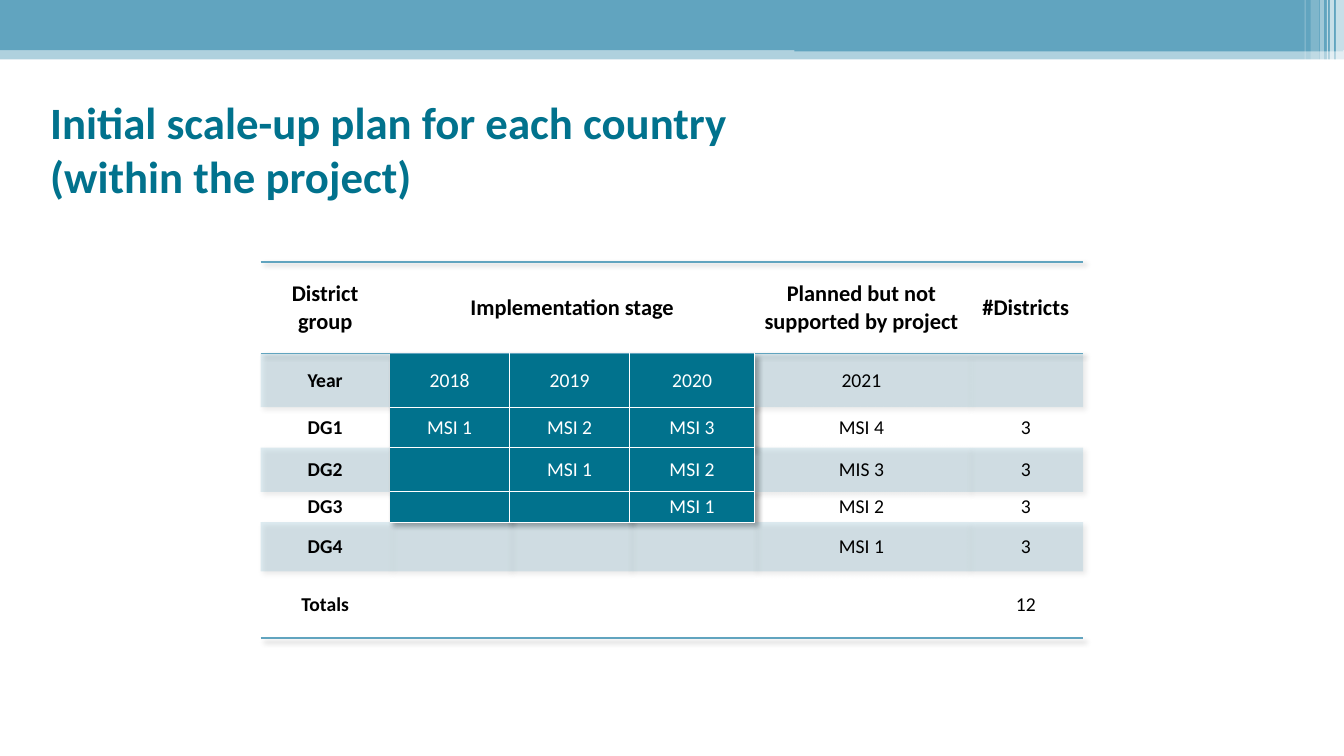
from lxml import etree
from pptx import Presentation
from pptx.dml.color import RGBColor
from pptx.enum.shapes import MSO_SHAPE
from pptx.enum.text import MSO_ANCHOR, PP_ALIGN
from pptx.oxml import parse_xml
from pptx.oxml.ns import qn
from pptx.util import Inches, Pt

RECTANGLE = MSO_SHAPE.RECTANGLE
MIDDLE = MSO_ANCHOR.MIDDLE
LEFT, CENTER = PP_ALIGN.LEFT, PP_ALIGN.CENTER
SKY = RGBColor(0x61, 0xA4, 0xBF)
TEAL = RGBColor(0x01, 0x72, 0x8D)
WHITE = RGBColor(0xFF, 0xFF, 0xFF)
BLACK = RGBColor(0, 0, 0)
FONT = "Calibri"
WIDTH, HEIGHT = 13.33, 7.5
NO_STYLE = "{2D5ABB26-0587-4C30-8999-92F81FD0307C}"
SHADOW = (
    '<a:effectLst xmlns:a="http://schemas.openxmlformats.org/drawingml/2006/main">'
    '<a:outerShdw blurRad="50800" dist="38100" dir="2700000" algn="tl" rotWithShape="0">'
    '<a:srgbClr val="000000"><a:alpha val="40000"/></a:srgbClr>'
    '</a:outerShdw></a:effectLst>')

# Content
TITLE = ["Initial scale-up plan for each country", "(within the project)"]
PLAN = [
    ["District group", "Implementation stage", "", "",
     "Planned but not supported by project", "#Districts"],
    ["Year", "2018", "2019", "2020", "2021", ""],
    ["DG1", "MSI 1", "MSI 2", "MSI 3", "MSI 4", "3"],
    ["DG2", "", "MSI 1", "MSI 2", "MIS 3", "3"],
    ["DG3", "", "", "MSI 1", "MSI 2", "3"],
    ["DG4", "", "", "", "MSI 1", "3"],
    ["Totals", "", "", "", "", "12"],
]
COLUMNS = [1.28, 1.19, 1.19, 1.24, 2.12, 1.14]
ROWS = [0.91, 0.53, 0.4, 0.44, 0.3, 0.49, 0.66]
STAGE_ROWS, STAGE_COLUMNS = range(1, 5), range(1, 4)

# Header band: left, top, width, height, opacity
BANDS = [(0, 0.5, WIDTH, 0.09, 50), (0, 0, WIDTH, 0.5, 100), (7.88, 0.41, 5.44, 0.1, 100)]
# White stripes at the right end: left, width, height, opacity
STRIPES = [(13.25, 0.08, 0.68, 65), (13.19, 0.04, 0.68, 65), (13.16, 0.01, 0.68, 60),
           (13.09, 0.04, 0.68, 40), (13, 0.08, 0.64, 20), (12.94, 0.01, 0.64, 30)]


def paint(fill, color, opacity=100):
    fill.solid()
    fill.fore_color.rgb = color
    if opacity < 100:
        tone = fill._xPr.find(qn("a:solidFill"))[0]
        etree.SubElement(tone, qn("a:alpha"), val=str(opacity * 1000))


def add_block(page, left, top, width, height, color, opacity):
    block = page.shapes.add_shape(
        RECTANGLE, Inches(left), Inches(top), Inches(width), Inches(height))
    block.shadow.inherit = False
    block.line.fill.background()
    paint(block.fill, color, opacity)


def write(para, text, size=14, color=BLACK, bold=False, align=CENTER):
    para.alignment = align
    if not text:
        etree.SubElement(para._p, qn("a:endParaRPr"), sz=str(size * 100))
        return
    for number, line in enumerate(text.split("\n")):
        if number:
            para.add_line_break()
        span = para.add_run()
        span.text = line
        span.font.name = FONT
        span.font.size = Pt(size)
        span.font.bold = bold
        span.font.color.rgb = color


def add_borders(cell, sides):
    properties = cell._tc.get_or_add_tcPr()
    place = 0
    for side in ("L", "R", "T", "B"):
        if side in sides:
            line = etree.Element(qn("a:ln" + side), w=str(Pt(1)))
            solid = etree.SubElement(line, qn("a:solidFill"))
            etree.SubElement(solid, qn("a:srgbClr"), val=str(sides[side]))
            properties.insert(place, line)
            place += 1


def format_cell(cell, text, row, column):
    header = row == 0
    stage = row in STAGE_ROWS and column in STAGE_COLUMNS
    cell.margin_left = cell.margin_right = Inches(0.07)
    cell.margin_top = cell.margin_bottom = 0
    cell.vertical_anchor = MIDDLE
    write(cell.text_frame.paragraphs[0], text, size=16 if header else 14,
          color=WHITE if stage else BLACK, bold=header or column == 0)
    if stage:
        paint(cell.fill, TEAL)
        sides = {"R": WHITE, "B": WHITE}
        if column > STAGE_COLUMNS[0]:
            sides["L"] = WHITE
        if row > STAGE_ROWS[0]:
            sides["T"] = WHITE
        add_borders(cell, sides)
    elif row % 2:
        paint(cell.fill, SKY, 20)
    else:
        cell.fill.background()
    if header:
        add_borders(cell, {"T": SKY, "B": SKY})
    elif row == len(ROWS) - 1:
        add_borders(cell, {"B": SKY})


def add_plan(page, left, top):
    frame = page.shapes.add_table(len(ROWS), len(COLUMNS), Inches(left), Inches(top),
                                  Inches(sum(COLUMNS)), Inches(sum(ROWS)))
    table = frame.table
    table.first_row = table.horz_banding = False
    style = table._tbl.tblPr.find(qn("a:tableStyleId"))
    style.text = NO_STYLE
    style.addprevious(parse_xml(SHADOW))
    for column, width in zip(table.columns, COLUMNS):
        column.width = Inches(width)
    for row, height in zip(table.rows, ROWS):
        row.height = Inches(height)
    for row, texts in enumerate(PLAN):
        for column, text in enumerate(texts):
            format_cell(table.cell(row, column), text, row, column)
    table.cell(0, STAGE_COLUMNS[0]).merge(table.cell(0, STAGE_COLUMNS[-1]))


def main():
    deck = Presentation()
    deck.slide_width, deck.slide_height = Inches(WIDTH), Inches(HEIGHT)
    page = deck.slides.add_slide(deck.slide_layouts[6])

    # Header band and stripes
    for left, top, width, height, opacity in BANDS:
        add_block(page, left, top, width, height, SKY, opacity)
    for left, width, height, opacity in STRIPES:
        add_block(page, left, 0, width, height, WHITE, opacity)

    # Title
    box = page.shapes.add_textbox(Inches(0.4), Inches(0.89), Inches(12.63), Inches(1.17))
    box.text_frame.word_wrap = True
    box.text_frame.vertical_anchor = MIDDLE
    write(box.text_frame.paragraphs[0], "\n".join(TITLE),
          size=32, color=TEAL, bold=True, align=LEFT)

    # Scale-up table, centred on the slide
    add_plan(page, (WIDTH - sum(COLUMNS)) / 2, 2.6)
    deck.save("out.pptx")


if __name__ == "__main__":
    main()
